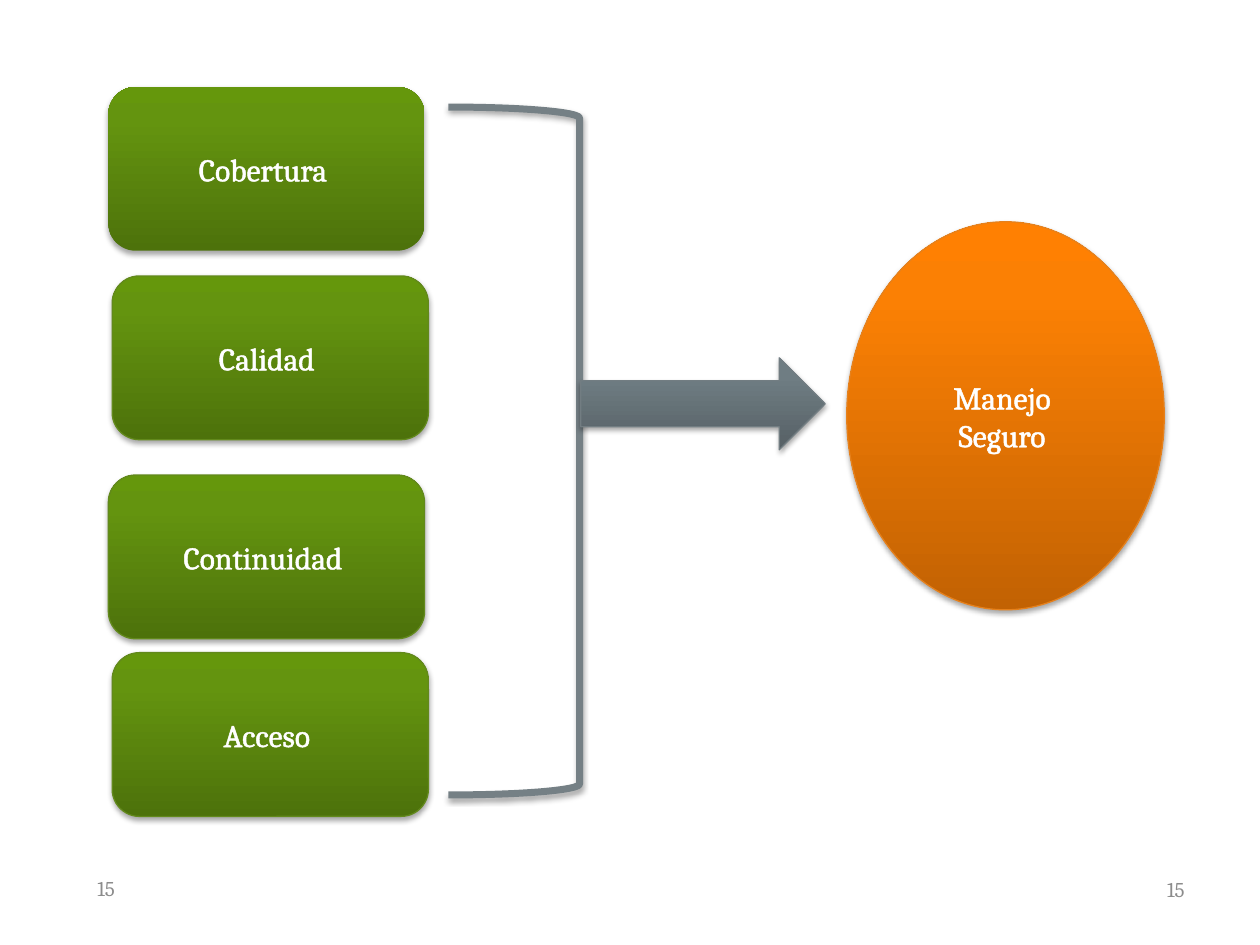
from lxml import etree
from pptx import Presentation
from pptx.dml.color import RGBColor
from pptx.enum.shapes import MSO_SHAPE
from pptx.enum.text import MSO_ANCHOR, PP_ALIGN
from pptx.oxml import parse_xml
from pptx.oxml.ns import nsdecls, qn
from pptx.util import Inches, Pt

ROUNDED, ELLIPSE = MSO_SHAPE.ROUNDED_RECTANGLE, MSO_SHAPE.OVAL
BRACKET, ARROW = MSO_SHAPE.RIGHT_BRACKET, MSO_SHAPE.RIGHT_ARROW
CENTER, RIGHT, MIDDLE = PP_ALIGN.CENTER, PP_ALIGN.RIGHT, MSO_ANCHOR.MIDDLE

THEME = {
    "font": "Cambria",
    "label_size": 18,
    "number_size": 12,
    "white": "FFFFFF",
    "number": "8C8C8C",
    "bracket": "758085",
    "green": {"stops": ("4D720B", "64940F", "65970C"), "line": "62891C"},
    "gray": {"stops": ("566065", "6F7D83", "6F7E84"), "line": "727D82"},
    "orange": {"stops": ("C26203", "FB8004", "FF8002"), "line": "E6811C"},
}
STOP_POSITIONS = (0, 80, 100)
THIN, THICK = 0.75, 4

# Text, left, top, outlined
FACTORS = [
    ("Cobertura ", 0.86, 0.69, False),
    ("Calidad ", 0.89, 2.19, True),
    ("Continuidad ", 0.86, 3.77, True),
    ("Acceso ", 0.89, 5.18, True),
]
FACTOR_SIZE = (2.51, 1.3)
RESULT = ["Manejo ", "Seguro "]
PAGE_NUMBER = "15"
PAGE_NUMBER_BOXES = [(0.5, 6.85, 0.51, 0.4), (7.17, 6.86, 2.33, 0.4)]


def write_text(shape, lines, *, size, color, align, outlined=False):
    frame = shape.text_frame
    frame.word_wrap = True
    frame.vertical_anchor = MIDDLE
    for index, line in enumerate(lines):
        paragraph = frame.add_paragraph() if index else frame.paragraphs[0]
        paragraph.alignment = align
        run = paragraph.add_run()
        run.text = line
        run.font.name = THEME["font"]
        run.font.size = Pt(size)
        run.font.color.rgb = RGBColor.from_string(color)
        if outlined:
            run.font._element.insert(0, parse_xml(
                f'<a:ln {nsdecls("a")} w="{Pt(1.45)}"><a:solidFill>'
                f'<a:srgbClr val="{color}"/></a:solidFill></a:ln>'))


def set_line(shape, color, width):
    shape.line.color.rgb = RGBColor.from_string(color)
    shape.line.width = Pt(width)


def set_gradient(shape, colors):
    """Fill from bottom to top with the three theme colours."""
    shape.fill.gradient()
    shape.fill.gradient_angle = 90
    stops = shape._element.spPr.find(".//" + qn("a:gsLst"))
    for stop in list(stops):
        stops.remove(stop)
    for position, color in zip(STOP_POSITIONS, colors):
        stop = etree.SubElement(stops, qn("a:gs"), pos=str(position * 1000))
        etree.SubElement(stop, qn("a:srgbClr"), val=color)


def add_shadow(shape):
    shape.shadow.inherit = False
    effects = shape._element.spPr.find(qn("a:effectLst"))
    effects.append(parse_xml(
        f'<a:outerShdw {nsdecls("a")} blurRad="{Pt(3.1)}" dist="{Pt(1.8)}" '
        'dir="5400000" rotWithShape="0"><a:srgbClr val="000000">'
        '<a:alpha val="35000"/></a:srgbClr></a:outerShdw>'))


def add_figure(slide, kind, box, palette=None, lines=(), outlined=True):
    shape = slide.shapes.add_shape(kind, *map(Inches, box))
    if palette:
        set_gradient(shape, palette["stops"])
        if outlined:
            set_line(shape, palette["line"], THIN)
        else:
            shape.line.fill.background()
    else:
        shape.fill.background()
        set_line(shape, THEME["bracket"], THICK)
    add_shadow(shape)
    if lines:
        write_text(shape, lines, size=THEME["label_size"],
                   color=THEME["white"], align=CENTER, outlined=True)


def main():
    presentation = Presentation()
    presentation.slide_width, presentation.slide_height = Inches(10), Inches(7.5)
    slide = presentation.slides.add_slide(presentation.slide_layouts[6])

    for box in PAGE_NUMBER_BOXES:
        number = slide.shapes.add_textbox(*map(Inches, box))
        write_text(number, [PAGE_NUMBER], size=THEME["number_size"],
                   color=THEME["number"], align=RIGHT)

    for text, left, top, outlined in FACTORS:
        add_figure(slide, ROUNDED, (left, top, *FACTOR_SIZE), THEME["green"],
                   [text], outlined)
    add_figure(slide, BRACKET, (3.56, 0.85, 1.04, 5.46))
    add_figure(slide, ARROW, (4.61, 2.84, 1.94, 0.73), THEME["gray"])
    add_figure(slide, ELLIPSE, (6.72, 1.76, 2.52, 3.08), THEME["orange"], RESULT)

    presentation.save("out.pptx")


if __name__ == "__main__":
    main()
